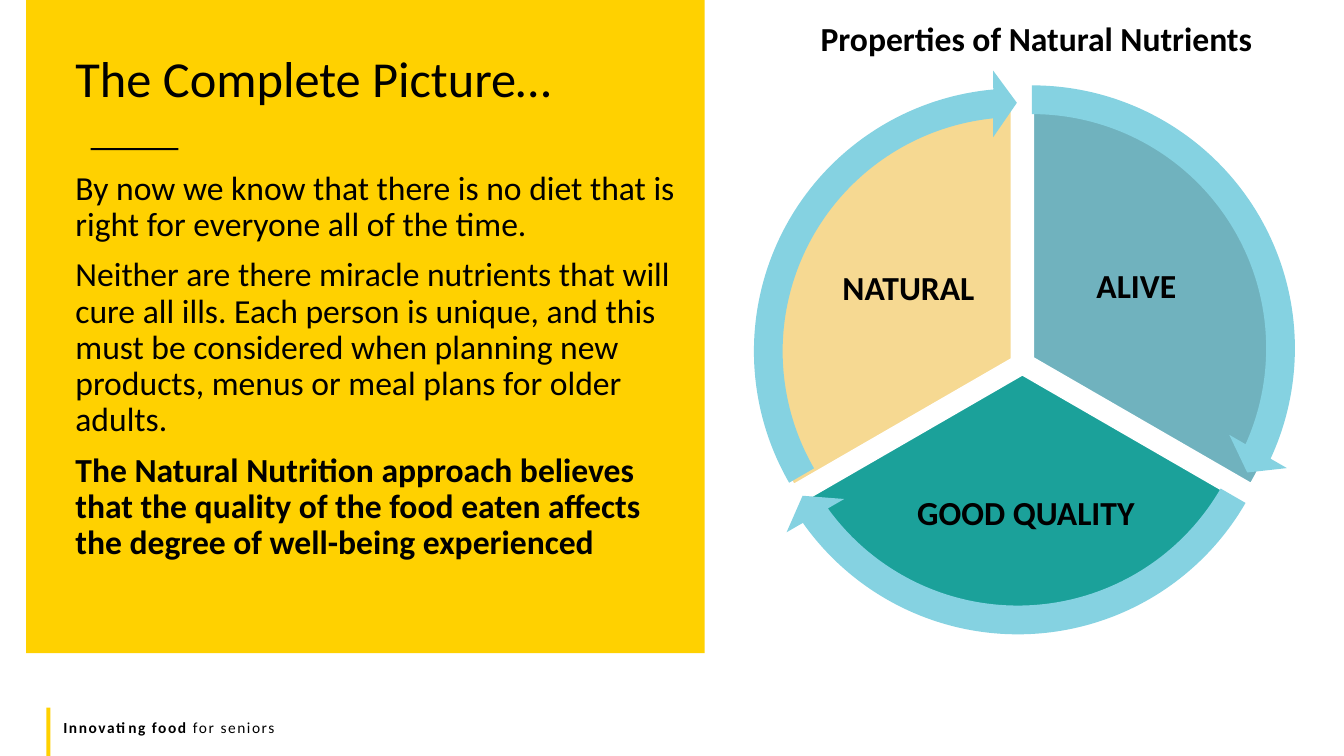
from dataclasses import dataclass

from pptx import Presentation
from pptx.dml.color import RGBColor
from pptx.enum.shapes import MSO_SHAPE
from pptx.enum.text import MSO_ANCHOR, PP_ALIGN
from pptx.util import Inches, Pt

YELLOW = RGBColor(0xFF, 0xD1, 0x00)
BLACK = RGBColor(0x00, 0x00, 0x00)
WHITE = RGBColor(0xFF, 0xFF, 0xFF)
BLUE_GREY = RGBColor(0x70, 0xB2, 0xBE)
TEAL = RGBColor(0x1B, 0xA1, 0x9A)
SAND = RGBColor(0xF6, 0xD9, 0x92)
SKY = RGBColor(0x85, 0xD2, 0xE1)

FONT = "Calibri"
PIE_SIZE = 4.98
ARROW_SIZE = 5.59
Box = tuple[float, float, float, float]


@dataclass
class Run:
    text: str
    bold: bool = False


@dataclass
class Sector:
    label: str
    color: RGBColor
    pie_at: tuple[float, float]
    pie_angles: tuple[float, float]
    label_box: Box
    arrow_at: tuple[float, float]
    arrow_angles: tuple[float, float]  # head, tail


SECTORS = [
    Sector("ALIVE", BLUE_GREY, (7.76, 1.06), (162, 18),
           (10.38, 2.11, 1.78, 1.48), (7.44, 0.66), (14.725, 161.994)),
    Sector("GOOD QUALITY", TEAL, (7.65, 1.23), (18, 90),
           (8.84, 4.46, 2.67, 1.3), (7.3, 0.89), (86.72, 18.005)),
    Sector("NATURAL", SAND, (7.54, 1.07), (90, 162),
           (8.12, 2.13, 1.78, 1.48), (7.29, 0.69), (158.73, 90)),
]

BODY = [
    [Run("By now we know that there is no diet that is right for everyone "
         "all of the time.")],
    [Run("Neither are there miracle nutrients that will cure all ills. Each "
         "person is unique, and this must be considered when planning new "
         "products, menus or meal plans for older adults.")],
    [Run("The Natural Nutrition approach believes that the quality of the "
         "food eaten affects the degree of well-being experienced", True)],
]


def add_solid(slide, kind: MSO_SHAPE, box: Box, color: RGBColor,
              adjustments: tuple[float, ...] = ()):
    sp = slide.shapes.add_shape(kind, *map(Inches, box))
    sp.shadow.inherit = False
    sp.fill.solid()
    sp.fill.fore_color.rgb = color
    sp.line.fill.background()
    for i, value in enumerate(adjustments):
        sp.adjustments[i] = value
    return sp


def add_text(slide, box: Box, paragraphs: list[list[Run]], size: float,
             line_spacing: float = 1.0, tracking: int = 0):
    tf = slide.shapes.add_textbox(*map(Inches, box)).text_frame
    tf.word_wrap = True
    for i, runs in enumerate(paragraphs):
        p = tf.add_paragraph() if i else tf.paragraphs[0]
        p.line_spacing = line_spacing
        if i:
            p.space_before = Pt(10)
        for run in runs:
            r = p.add_run()
            r.text = run.text
            r.font.name = FONT
            r.font.size = Pt(size)
            r.font.bold = run.bold
            r.font.color.rgb = BLACK
            if tracking:
                r.font._element.set("spc", str(tracking))
    return tf


def add_pie(slide, sector: Sector) -> None:
    sp = add_solid(slide, MSO_SHAPE.PIE, (*sector.pie_at, PIE_SIZE, PIE_SIZE),
                   sector.color, sector.pie_angles)
    sp.line.color.rgb = WHITE
    sp.line.width = Pt(1)
    tf = add_text(slide, sector.label_box, [[Run(sector.label, True)]], 24, 0.9)
    tf.vertical_anchor = MSO_ANCHOR.MIDDLE
    tf.margin_left = tf.margin_right = Inches(0.03)
    tf.margin_top = tf.margin_bottom = Inches(0.03)
    tf.paragraphs[0].alignment = PP_ALIGN.CENTER


def add_arrow(slide, sector: Sector) -> None:
    add_solid(slide, MSO_SHAPE.CIRCULAR_ARROW,
              (*sector.arrow_at, ARROW_SIZE, ARROW_SIZE), SKY,
              (0.051, 3.275, *sector.arrow_angles, 0.059))


def main() -> None:
    prs = Presentation()
    prs.slide_width, prs.slide_height = Inches(13.33), Inches(7.5)
    slide = prs.slides.add_slide(prs.slide_layouts[6])

    # Yellow panel and title rule
    add_solid(slide, MSO_SHAPE.RECTANGLE, (0.26, 0, 6.73, 6.48), YELLOW)
    add_solid(slide, MSO_SHAPE.RECTANGLE, (0.9, 1.47, 0.87, 0.02), BLACK)

    # Footer
    add_text(slide, (0.53, 7.07, 12, 0.29),
             [[Run("Innovating food ", True), Run("for seniors")]], 11,
             tracking=110)
    add_solid(slide, MSO_SHAPE.RECTANGLE, (0.46, 7.02, 0.04, 0.48), YELLOW)

    # Panel text
    add_text(slide, (0.65, 1.65, 6.23, 4.5), BODY, 24, 0.9)
    add_text(slide, (0.65, 0.53, 5.56, 0.64),
             [[Run("The Complete Picture…")]], 36, 0.8)

    # Nutrient cycle: sectors first, arrows on top
    for sector in SECTORS:
        add_pie(slide, sector)
    for sector in SECTORS:
        add_arrow(slide, sector)
    add_text(slide, (8.04, 0.13, 4.72, 0.5),
             [[Run("Properties of Natural Nutrients", True)]], 24)

    prs.save("out.pptx")


if __name__ == "__main__":
    main()
